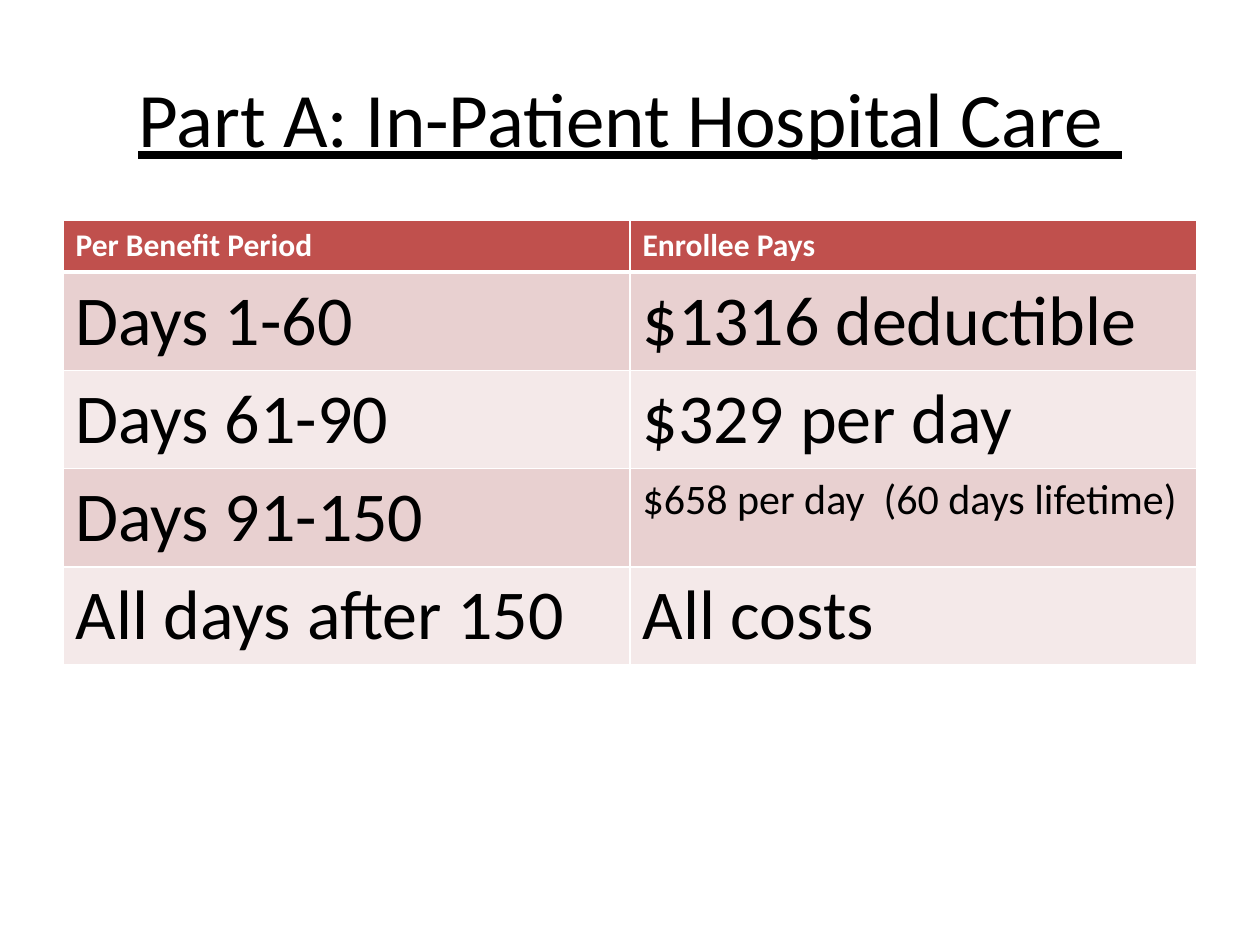
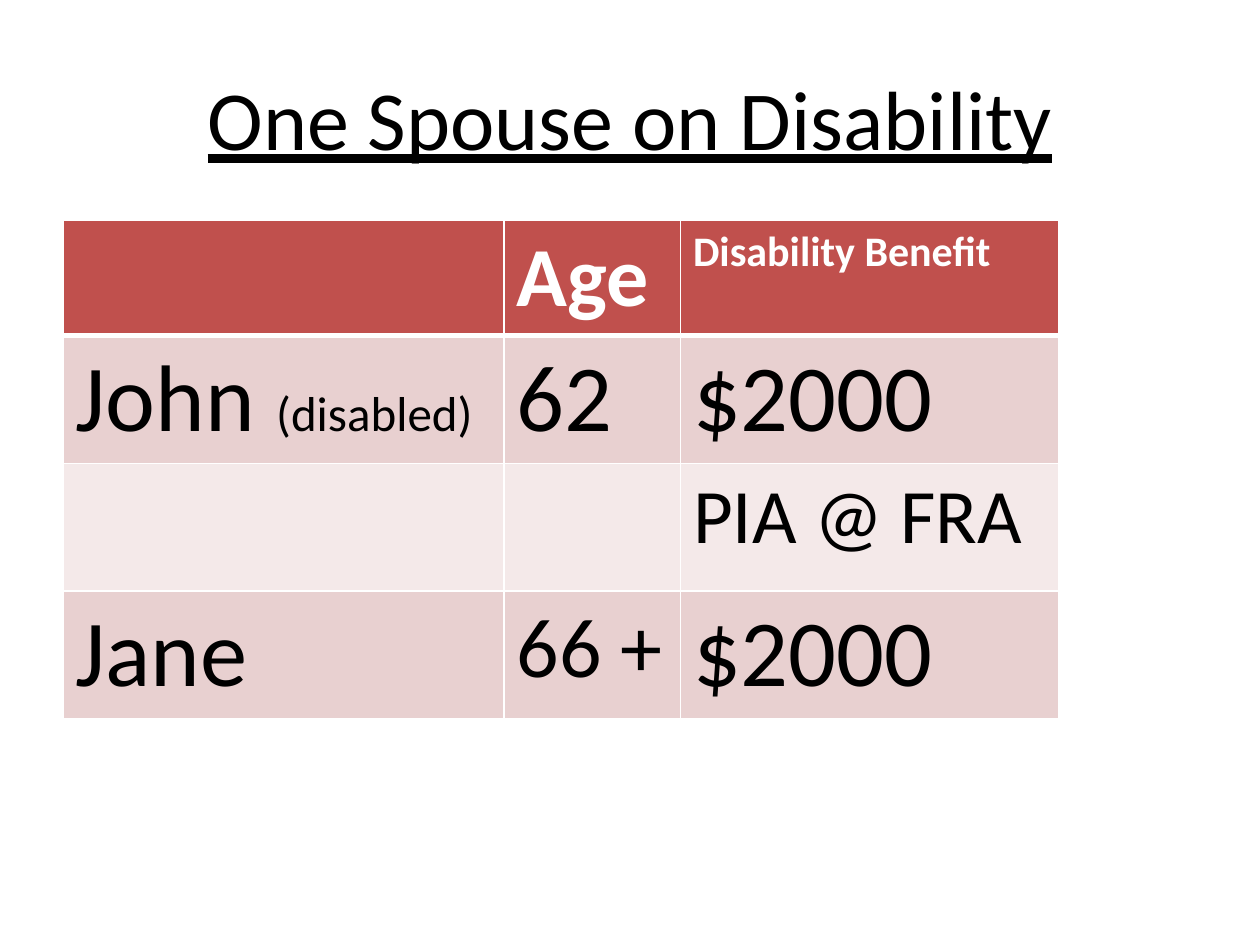
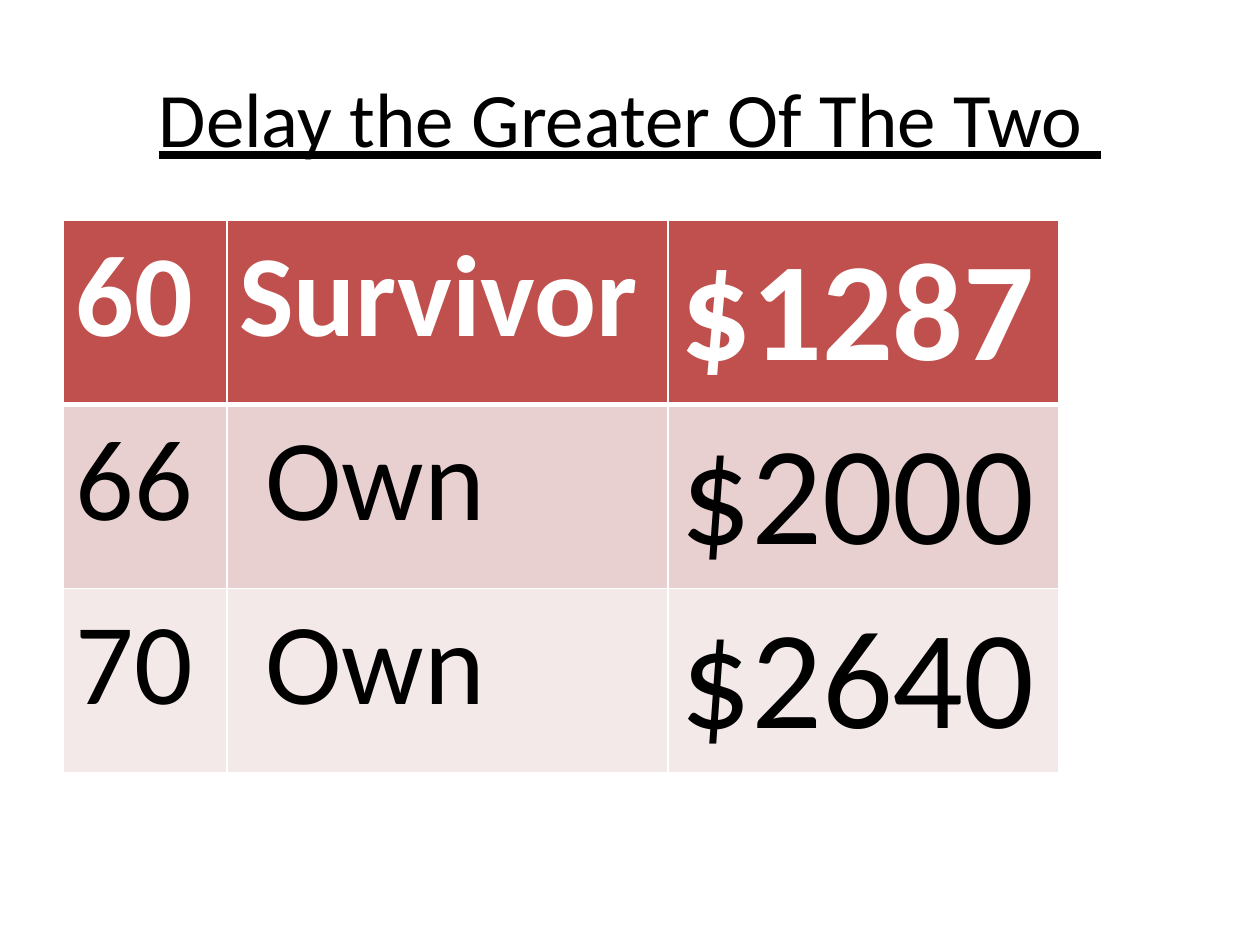
from dataclasses import dataclass

from lxml.etree import SubElement
from pptx import Presentation
from pptx.dml.color import RGBColor
from pptx.enum.text import MSO_ANCHOR, MSO_AUTO_SIZE, PP_ALIGN
from pptx.oxml.ns import qn
from pptx.util import Inches, Pt


@dataclass(frozen=True)
class Theme:
    font: str = "Calibri"
    text: str = "000000"
    header_text: str = "FFFFFF"
    header_fill: str = "C0504D"
    bands: tuple = ("E8D0D0", "F4E9E9")
    border: str = "FFFFFF"
    border_width: float = 1
    header_rule: float = 3


THEME = Theme()
LEFT = 0.5
TITLE_BOX = (LEFT, 0.3, 9, 1.25)
TABLE_TOP = 1.75

# A cell is a list of (text, size) runs; the first row is the header.
SLIDES = [
    {
        "title": ("Part A: In-Patient Hospital Care ", 44),
        "columns": [4.5, 4.5],
        "header_height": 0.41,
        "row_height": 0.78,
        "rows": [
            [[("Per Benefit Period", 18)], [("Enrollee Pays", 18)]],
            [[("Days 1-60", 40)], [("$1316 deductible", 40)]],
            [[("Days 61-90", 40)], [("$329 per day", 40)]],
            [[("Days 91-150", 40)], [("$658 per day  (60 days lifetime)", 24)]],
            [[("All days after 150", 40)], [("All costs", 40)]],
        ],
    },
    {
        "title": ("One Spouse on Disability", 48),
        "columns": [3.5, 1.4, 3],
        "header_height": 0.91,
        "row_height": 1.01,
        "rows": [
            [[], [("Age", 48)], [("Disability Benefit", 24)]],
            [[("John ", 54), ("(disabled)", 28)], [("62", 54)], [("$2000", 54)]],
            [[], [], [("PIA @ FRA", 44)]],
            [[("Jane", 54)], [("66 +", 48)], [("$2000", 54)]],
        ],
    },
    {
        "title": ("Delay the Greater Of The Two ", 44),
        "columns": [1.3, 3.5, 3.1],
        "header_height": 1.46,
        "row_height": 1.46,
        "rows": [
            [[("60", 66)], [("Survivor", 66)], [("$1287", 80)]],
            [[("66", 66)], [(" Own", 66)], [("$2000", 80)]],
            [[("70", 66)], [(" Own", 66)], [("$2640", 80)]],
        ],
    },
]


def add_run(p, text, size, color, bold=False, underline=False):
    r = p.add_run()
    r.text = text
    font = r.font
    font.name, font.size = THEME.font, Pt(size)
    font.bold, font.underline = bold, underline
    font.color.rgb = RGBColor.from_string(color)


def set_title(s, text, size):
    title = s.shapes.title
    title.left, title.top, title.width, title.height = map(Inches, TITLE_BOX)
    tf = title.text_frame
    tf.word_wrap = True
    tf.auto_size = MSO_AUTO_SIZE.NONE
    tf.vertical_anchor = MSO_ANCHOR.MIDDLE
    p = tf.paragraphs[0]
    p.alignment = PP_ALIGN.CENTER
    add_run(p, text, size, THEME.text, underline=True)


def set_borders(cell, row):
    """Draw the cell grid, with a heavier rule between header and body."""
    widths = dict.fromkeys(("lnL", "lnR", "lnT", "lnB"), THEME.border_width)
    if row == 0:
        widths["lnB"] = THEME.header_rule
    elif row == 1:
        widths["lnT"] = THEME.header_rule
    tcPr = cell._tc.get_or_add_tcPr()
    for side, width in widths.items():
        line = SubElement(tcPr, qn(f"a:{side}"), w=str(Pt(width)))
        fill = SubElement(line, qn("a:solidFill"))
        SubElement(fill, qn("a:srgbClr"), val=THEME.border)


def fill_cell(cell, row, runs):
    header = row == 0
    set_borders(cell, row)
    cell.fill.solid()
    color = THEME.header_fill if header else THEME.bands[(row - 1) % 2]
    cell.fill.fore_color.rgb = RGBColor.from_string(color)
    p = cell.text_frame.paragraphs[0]
    for text, size in runs:
        add_run(p, text, size, THEME.header_text if header else THEME.text, bold=header)


def add_benefit_table(s, columns, rows, header_height, row_height):
    heights = [header_height] + [row_height] * (len(rows) - 1)
    frame = s.shapes.add_table(
        len(rows), len(columns), Inches(LEFT), Inches(TABLE_TOP),
        Inches(sum(columns)), Inches(sum(heights)))
    table = frame.table
    for column, width in zip(table.columns, columns):
        column.width = Inches(width)
    for i, (height, cells) in enumerate(zip(heights, rows)):
        table.rows[i].height = Inches(height)
        for j, runs in enumerate(cells):
            fill_cell(table.cell(i, j), i, runs)


def main():
    prs = Presentation()
    prs.slide_width, prs.slide_height = Inches(10), Inches(7.5)
    for content in SLIDES:
        s = prs.slides.add_slide(prs.slide_layouts[5])
        set_title(s, *content["title"])
        add_benefit_table(s, content["columns"], content["rows"],
                          content["header_height"], content["row_height"])
    prs.save("out.pptx")


if __name__ == "__main__":
    main()
